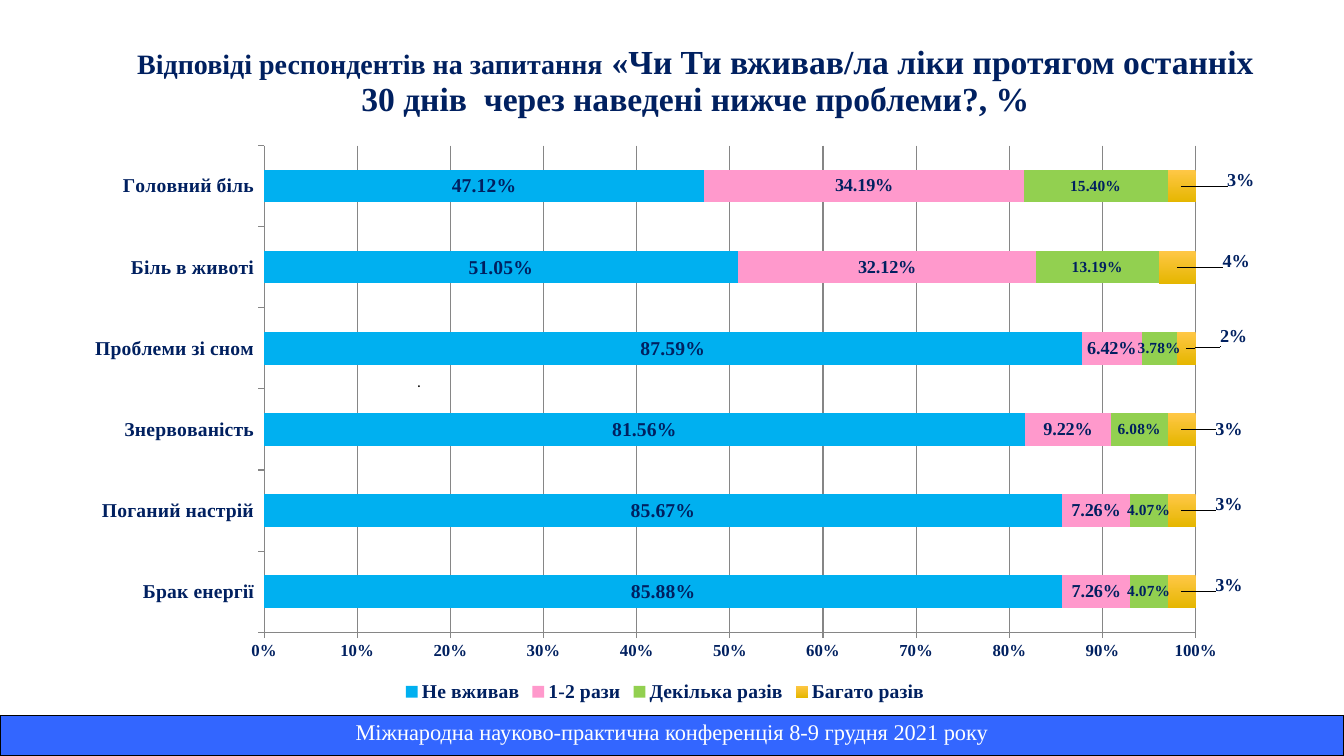
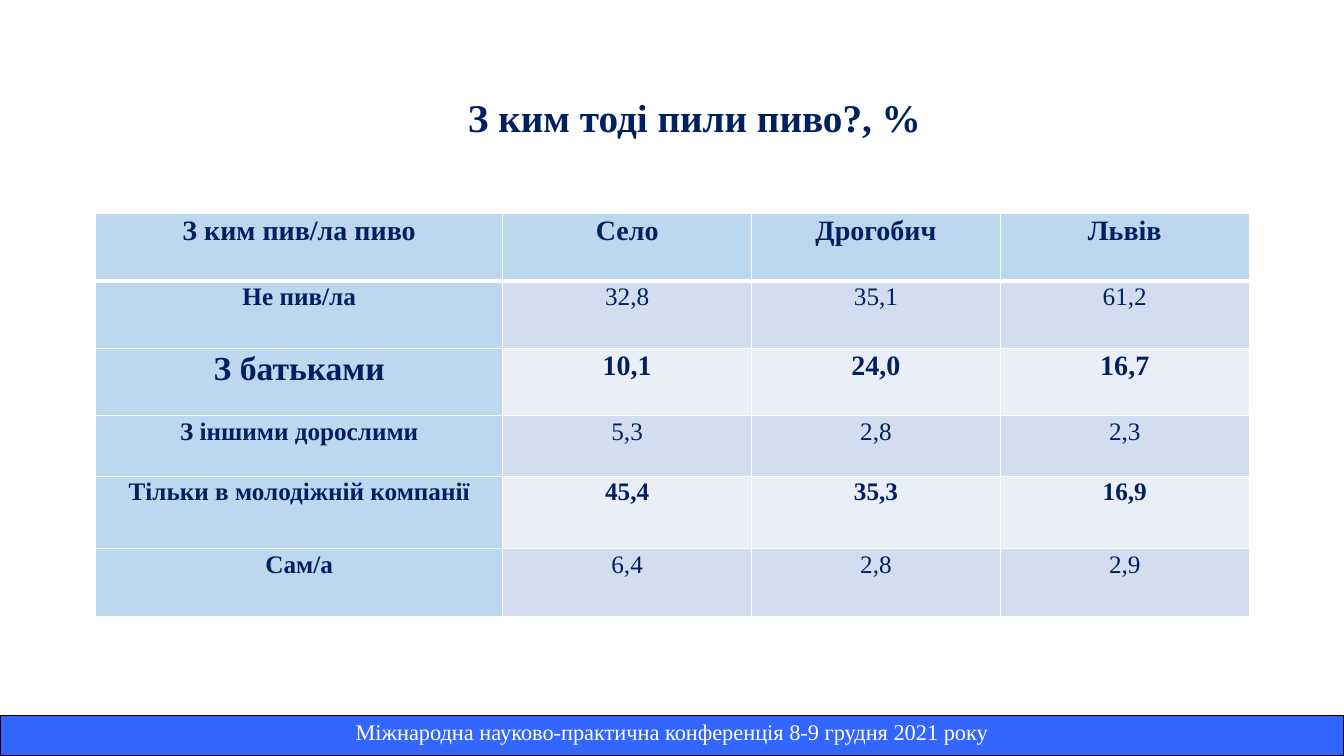
from dataclasses import dataclass
from typing import Any

from lxml import etree
from pptx import Presentation
from pptx import util as u
from pptx.chart.data import CategoryChartData
from pptx.dml.color import RGBColor
from pptx.enum import chart as ch
from pptx.enum import text
from pptx.oxml import parse_xml
from pptx.oxml.ns import nsdecls, qn

NAVY = RGBColor(0x00, 0x20, 0x60)
WHITE = RGBColor(0xFF, 0xFF, 0xFF)
BLACK = RGBColor(0x00, 0x00, 0x00)
GREY = RGBColor(0x86, 0x86, 0x86)
BAND_BLUE = RGBColor(0x33, 0x66, 0xFF)
HEADER_BLUE = RGBColor(0xBD, 0xD7, 0xEE)
ROW_DARK = RGBColor(0xD2, 0xDE, 0xEF)
ROW_LIGHT = RGBColor(0xEA, 0xEF, 0xF7)
SKY = RGBColor(0x00, 0xB0, 0xF0)
PINK = RGBColor(0xFF, 0x99, 0xCC)
GREEN = RGBColor(0x92, 0xD0, 0x50)
GOLD_TOP = RGBColor(0xFF, 0xC7, 0x46)
GOLD_BOTTOM = RGBColor(0xE5, 0xB6, 0x00)

SLIDE_W, SLIDE_H = u.Cm(33.87), u.Cm(19.05)
FOOTER_TEXT = "Міжнародна науково-практична конференція 8-9 грудня 2021 року"
BASE = {"name": "Times New Roman", "bold": True, "color": NAVY}
CENTER = text.PP_ALIGN.CENTER


@dataclass
class Run:
    text: str
    size: float


@dataclass
class Box:
    left: float
    top: float
    width: float
    height: float

    def lengths(self) -> list[u.Length]:
        return [u.Cm(v) for v in (self.left, self.top, self.width, self.height)]


@dataclass
class Series:
    name: str
    values: list[float]
    colors: list[RGBColor]
    label_size: int
    label_format: str = "0.00%"


@dataclass
class Row:
    cells: list[str]
    height: float
    head_size: int = 18
    value_size: int = 18
    bold: bool = False


CATEGORIES = ["Брак енергії", "Поганий настрій", "Знервованість",
              "Проблеми зі сном", "Біль в животі", "Головний біль"]
SERIES = [
    Series("Не вживав", [0.8588, 0.8567, 0.8156, 0.8759, 0.5105, 0.4712], [SKY], 14),
    Series("1-2 рази", [0.0726, 0.0726, 0.0922, 0.0642, 0.3212, 0.3419], [PINK], 13),
    Series("Декілька разів", [0.0407, 0.0407, 0.0608, 0.0378, 0.1319, 0.154], [GREEN], 11),
    Series("Багато разів", [0.03, 0.03, 0.03, 0.02, 0.04, 0.03],
           [GOLD_TOP, GOLD_BOTTOM], 13, "0%"),
]
# Shifts of the last series' labels, as shares of the chart size
LABEL_SHIFTS = [(0.04, -0.01), (0.04, -0.01), (0.04, 0), (0.04, -0.02),
                (0.05, -0.01), (0.05, -0.01)]

COMPANY_ROWS = [
    Row(["З ким пив/ла пиво", "Село", "Дрогобич", "Львів"], 1.7, 20, 20, True),
    Row(["Не пив/ла", "32,8", "35,1", "61,2"], 1.7),
    Row(["З батьками", "10,1", "24,0", "16,7"], 1.7, 24, 20, True),
    Row(["З іншими дорослими", "5,3", "2,8", "2,3"], 1.52),
    Row(["Тільки в молодіжній компанії", "45,4", "35,3", "16,9"], 1.83, bold=True),
    Row(["Сам/а", "6,4", "2,8", "2,9"], 1.7),
]
COMPANY_COLS = [10.26, 6.27, 6.27, 6.27]


def set_font(font: Any, **changes: Any) -> None:
    """Apply the shared text format, with any changes, to a font."""
    for name, value in (BASE | changes).items():
        if name == "color":
            font.color.rgb = value
        else:
            setattr(font, name, u.Pt(value) if name == "size" else value)


def add_run(p: Any, content: str, **changes: Any) -> None:
    r = p.add_run()
    r.text = content
    set_font(r.font, **changes)


def add_title(slide: Any, box: Box, runs: list[Run]) -> None:
    tf = slide.shapes.add_textbox(*box.lengths()).text_frame
    tf.word_wrap = True
    tf.vertical_anchor = text.MSO_ANCHOR.MIDDLE
    p = tf.paragraphs[0]
    p.alignment, p.line_spacing = CENTER, 0.9
    for run in runs:
        add_run(p, run.text, size=run.size)


def set_borders(cell: Any, color: RGBColor, top: float = 1, bottom: float = 1) -> None:
    tc_pr = cell._tc.get_or_add_tcPr()
    widths = {"lnL": 1, "lnR": 1, "lnT": top, "lnB": bottom}
    for i, (tag, width) in enumerate(widths.items()):
        tc_pr.insert(i, parse_xml(
            f'<a:{tag} {nsdecls("a")} w="{u.Pt(width)}"><a:solidFill>'
            f'<a:srgbClr val="{color}"/></a:solidFill></a:{tag}>'))


def add_plain_table(slide: Any, box: Box, rows: list[float], cols: list[float]) -> Any:
    """Add a table without style bands, with the given row and column sizes."""
    table = slide.shapes.add_table(len(rows), len(cols), *box.lengths()).table
    table.first_row = table.horz_banding = False
    for row, height in zip(table.rows, rows):
        row.height = u.Cm(height)
    for col, width in zip(table.columns, cols):
        col.width = u.Cm(width)
    return table


def fill_cell(cell: Any, content: str, back: RGBColor, **changes: Any) -> Any:
    """Colour a cell, write centred text in it and return its paragraph."""
    cell.fill.solid()
    cell.fill.fore_color.rgb = back
    p = cell.text_frame.paragraphs[0]
    p.alignment = CENTER
    add_run(p, content, **changes)
    return p


def add_footer(slide: Any) -> None:
    table = add_plain_table(slide, Box(0, 18.03, 33.87, 1.02), [1.02], [33.87])
    cell = table.cell(0, 0)
    fill_cell(cell, FOOTER_TEXT, BAND_BLUE, size=16, bold=False, color=WHITE)
    set_borders(cell, BLACK)


def manual_layout(**values: Any) -> Any:
    """Build a chart layout element from its settings, in schema order."""
    layout = parse_xml(f'<c:layout {nsdecls("c")}><c:manualLayout/></c:layout>')
    for tag, value in values.items():
        etree.SubElement(layout[0], qn(f"c:{tag}")).set("val", str(value))
    return layout


def format_series(series: Any, data: Series) -> None:
    fill = series.format.fill
    if len(data.colors) == 1:
        fill.solid()
        fill.fore_color.rgb = data.colors[0]
    else:
        fill.gradient()
        fill.gradient_angle = 270
        for stop, color in zip(fill.gradient_stops, data.colors):
            stop.color.rgb = color
    labels = series.data_labels
    labels.show_value = True
    labels.number_format, labels.number_format_is_linked = data.label_format, False
    set_font(labels.font, size=data.label_size)


def shift_labels(series: Any, data: Series) -> None:
    """Move each label of a series away from its bar."""
    for i in range(len(data.values)):
        set_font(series.points[i].data_label.font, size=data.label_size)
    for label, (x, y) in zip(series.data_labels._element.findall(qn("c:dLbl")), LABEL_SHIFTS):
        number = parse_xml(f'<c:numFmt {nsdecls("c")} formatCode="{data.label_format}" '
                           'sourceLinked="0"/>')
        label.insert(1, manual_layout(x=x, y=y))
        label.insert(2, number)


def format_axes(chart: Any) -> None:
    for axis, size in ((chart.category_axis, 14), (chart.value_axis, 12)):
        axis.major_tick_mark = ch.XL_TICK_MARK.OUTSIDE
        axis.format.line.color.rgb = GREY
        set_font(axis.tick_labels.font, size=size)
    axis = chart.value_axis
    axis.minimum_scale, axis.maximum_scale, axis.major_unit = 0, 1, 0.1
    axis.has_major_gridlines = True
    axis.major_gridlines.format.line.color.rgb = GREY
    axis.tick_labels.number_format = "0%"
    axis.tick_labels.number_format_is_linked = False


def add_medicine_chart(slide: Any) -> None:
    data = CategoryChartData(number_format="0.00%")
    data.categories = CATEGORIES
    for item in SERIES:
        data.add_series(item.name, item.values)
    chart = slide.shapes.add_chart(ch.XL_CHART_TYPE.BAR_STACKED_100,
                                   *Box(1.9, 3.38, 29.72, 14.43).lengths(), data).chart
    chart.has_title = False
    set_font(chart.font, size=10)
    chart.has_legend = True
    chart.legend.position = ch.XL_LEGEND_POSITION.BOTTOM
    chart.legend.include_in_layout = False
    set_font(chart.legend.font, size=14)
    format_axes(chart)
    plot = chart.plots[0]
    plot.gap_width, plot.overlap, plot.vary_by_categories = 150, 100, False
    for series, item in zip(plot.series, SERIES):
        format_series(series, item)
    shift_labels(plot.series[-1], SERIES[-1])
    area = chart._chartSpace.find(".//" + qn("c:plotArea"))
    for old in area.findall(qn("c:layout")):
        area.remove(old)
    area.insert(0, manual_layout(layoutTarget="inner", xMode="edge", yMode="edge",
                                 x=0.16, y=0.02, w=0.79, h=0.85))


def add_dot(slide: Any) -> None:
    tf = slide.shapes.add_textbox(*Box(10.26, 9.25, 0.61, 0.74).lengths()).text_frame
    tf.word_wrap = False
    tf.vertical_anchor = text.MSO_ANCHOR.MIDDLE
    add_run(tf.paragraphs[0], ".", name="Calibri", size=11, bold=False, color=BLACK)


def add_company_table(slide: Any) -> None:
    table = add_plain_table(slide, Box(2.41, 5.38, 29.07, 10.15),
                            [row.height for row in COMPANY_ROWS], COMPANY_COLS)
    for i, row in enumerate(COMPANY_ROWS):
        for j, content in enumerate(row.cells):
            cell = table.cell(i, j)
            cell.margin_left = cell.margin_right = u.Cm(0.18)
            cell.margin_top = cell.margin_bottom = 0
            is_head = i == 0 or j == 0
            back = HEADER_BLUE if is_head else ROW_DARK if i % 2 else ROW_LIGHT
            p = fill_cell(cell, content, back, bold=is_head or row.bold,
                          size=row.value_size if j else row.head_size)
            p.line_spacing = 1.07
            set_borders(cell, WHITE, top=3 if i == 1 else 1, bottom=3 if i == 0 else 1)


def main() -> None:
    prs = Presentation()
    prs.slide_width, prs.slide_height = SLIDE_W, SLIDE_H
    blank = prs.slide_layouts[6]

    medicine = prs.slides.add_slide(blank)
    add_title(medicine, Box(2.92, 0.23, 29.21, 3.68), [
        Run("Відповіді респондентів на запитання", 20),
        Run(" «Чи Ти вживав/ла ліки протягом останніх 30 днів  через наведені "
            "нижче проблеми?, %", 24)])
    add_footer(medicine)
    add_dot(medicine)
    add_medicine_chart(medicine)

    company = prs.slides.add_slide(blank)
    add_title(company, Box(11.5, 2.2, 12, 1.64), [Run("З ким тоді пили пиво?, %", 28)])
    add_company_table(company)
    add_footer(company)

    prs.save("out.pptx")


if __name__ == "__main__":
    main()
